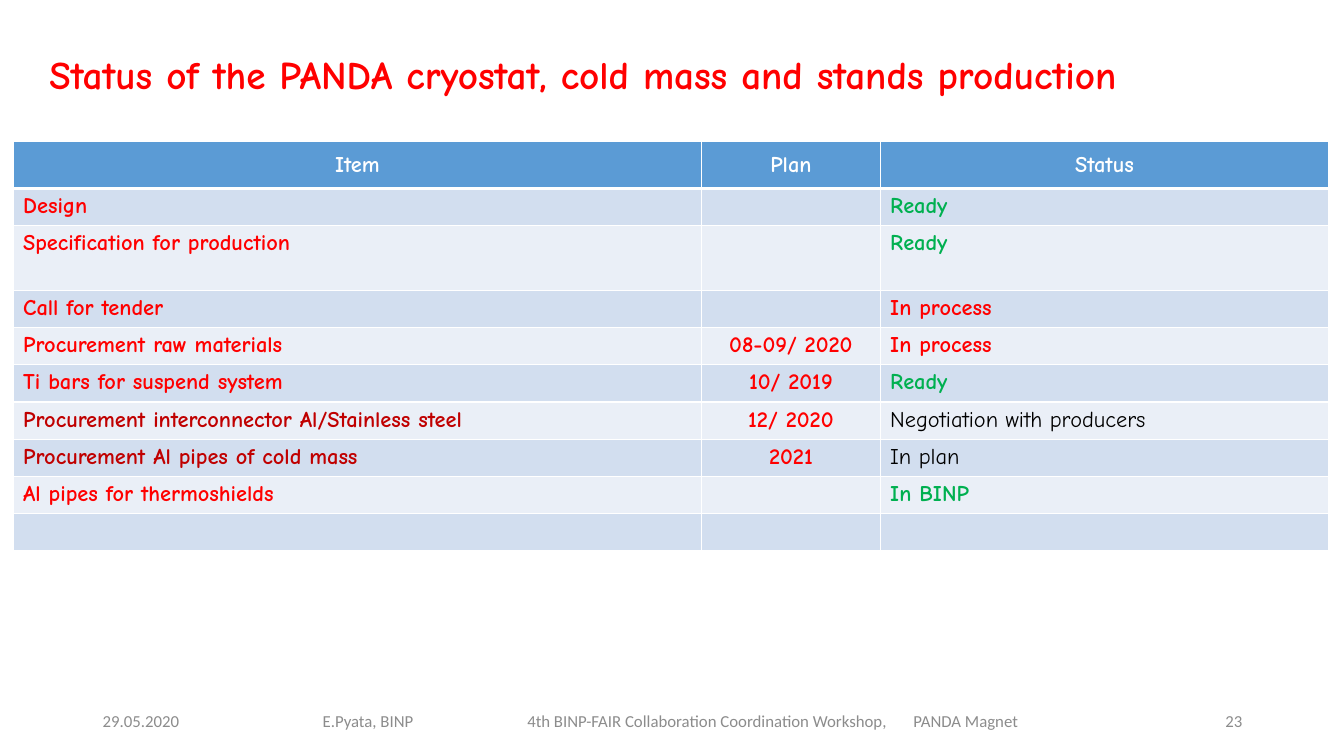
import pptx
import pptx.dml.color
import pptx.enum.text
import pptx.oxml
import pptx.oxml.ns
import pptx.util
from lxml import etree

Inches = pptx.util.Inches
Pt = pptx.util.Pt
ALIGN = pptx.enum.text.PP_ALIGN
ANCHOR = pptx.enum.text.MSO_ANCHOR
qn = pptx.oxml.ns.qn

COLORS = {
    "white": "FFFFFF", "black": "000000", "red": "FF0000", "dark_red": "C00000",
    "green": "00B050", "gray": "8C8C8C", "header": "5B9BD5",
    "band_dark": "D2DEEF", "band_light": "EAEFF7",
}
BODY_FONT = "Comic Neue"
HEADERS = ["Item", "Plan", "Status"]
ROWS = [
    ("Design", "red", "", "Ready", "green"),
    ("Specification for production", "red", "", "Ready", "green"),
    ("Call for tender", "red", "", "In process", "red"),
    ("Procurement raw materials", "red", "08-09/ 2020", "In process", "red"),
    ("Ti bars for suspend system", "red", "10/ 2019", "Ready", "green"),
    ("Procurement interconnector Al/Stainless steel", "dark_red", "12/ 2020",
     "Negotiation with producers", "black"),
    ("Procurement Al pipes of cold mass", "dark_red", "2021", "In plan", "black"),
    ("Al pipes for thermoshields", "red", "", "In BINP", "green"),
    ("", "red", "", "", "red"),
]
COL_WIDTHS = [6.83, 1.77, 4.45]
HEADER_HEIGHT, ROW_HEIGHT, TALL_ROW_HEIGHT = 0.47, 0.37, 0.64
TALL_ROW = 2


def rgb(name):
    return pptx.dml.color.RGBColor.from_string(COLORS[name])


def write(tf, text, size, font, color, bold=False, align=ALIGN.LEFT):
    p = tf.paragraphs[0]
    p.text = text
    p.alignment = align
    for r in p.runs:
        r.font.size = Pt(size)
        r.font.name = font
        r.font.bold = bold
        r.font.color.rgb = rgb(color)
    if not text:
        etree.SubElement(p._p, qn("a:endParaRPr"), sz=str(size * 100))
    return p


def add_title(s, text):
    sp = s.shapes.title
    sp.left, sp.top, sp.width, sp.height = map(Inches, (0.39, 0.45, 12.63, 0.57))
    tf = sp.text_frame
    tf.auto_size = pptx.enum.text.MSO_AUTO_SIZE.NONE
    tf.vertical_anchor = ANCHOR.TOP
    write(tf, text, 28, BODY_FONT, "red", True)


def add_footer(s, left, width, text, align=ALIGN.LEFT, inset=0.1, tabs=()):
    sp = s.shapes.add_textbox(Inches(left), Inches(6.95), Inches(width), Inches(0.4))
    tf = sp.text_frame
    tf.word_wrap = True
    tf.vertical_anchor = ANCHOR.MIDDLE
    tf.margin_left = Inches(inset)
    p = write(tf, text, 12, "Calibri", "gray", align=align)
    if tabs:
        tab_list = etree.SubElement(p._p.get_or_add_pPr(), qn("a:tabLst"))
        for pos in tabs:
            etree.SubElement(tab_list, qn("a:tab"), pos=str(Inches(pos)), algn="l")


def set_borders(cell, widths):
    tc_pr = cell._tc.get_or_add_tcPr()
    for side, width in zip("LRTB", widths):
        ln = etree.SubElement(tc_pr, qn(f"a:ln{side}"), w=str(Pt(width)))
        fill = etree.SubElement(ln, qn("a:solidFill"))
        etree.SubElement(fill, qn("a:srgbClr"), val=COLORS["white"])


def fill_cell(cell, text, color, fill, bold, align, widths):
    set_borders(cell, widths)
    cell.fill.solid()
    cell.fill.fore_color.rgb = rgb(fill)
    write(cell.text_frame, text, 16, BODY_FONT, color, bold, align)


def add_status_table(s):
    height = HEADER_HEIGHT + TALL_ROW_HEIGHT + ROW_HEIGHT * (len(ROWS) - 1)
    table = s.shapes.add_table(len(ROWS) + 1, len(HEADERS), Inches(0.13), Inches(1.4),
                               Inches(sum(COL_WIDTHS)), Inches(height)).table
    for col, width in zip(table.columns, COL_WIDTHS):
        col.width = Inches(width)
    table.rows[0].height = Inches(HEADER_HEIGHT)
    for c, text in enumerate(HEADERS):
        cell = table.cell(0, c)
        fill_cell(cell, text, "white", "header", True, ALIGN.CENTER, (1, 1, 1, 3))
        cell.vertical_anchor = ANCHOR.MIDDLE
    for i, (item, item_color, plan, status, status_color) in enumerate(ROWS, 1):
        table.rows[i].height = Inches(TALL_ROW_HEIGHT if i == TALL_ROW else ROW_HEIGHT)
        band = "band_dark" if i % 2 else "band_light"
        widths = (1, 1, 3 if i == 1 else 1, 1)
        cells = [(item, item_color, ALIGN.LEFT), (plan, "red", ALIGN.CENTER),
                 (status, status_color, ALIGN.LEFT)]
        for c, (text, color, align) in enumerate(cells):
            fill_cell(table.cell(i, c), text, color, band, color != "black", align, widths)


def main():
    prs = pptx.Presentation()
    prs.slide_width, prs.slide_height = Inches(13.33), Inches(7.5)
    s = prs.slides.add_slide(prs.slide_layouts[5])
    add_footer(s, 0.92, 3, "29.05.2020")
    add_footer(s, 2.57, 8.17,
               "E.Pyata, BINP\t4th BINP-FAIR Collaboration Coordination Workshop,\tPANDA Magnet",
               inset=0.63, tabs=(2.03, 5.86))
    add_footer(s, 9.42, 3, "23", ALIGN.RIGHT)
    add_title(s, "Status of the PANDA cryostat, cold mass and stands production")
    add_status_table(s)
    prs.save("out.pptx")


if __name__ == "__main__":
    main()
